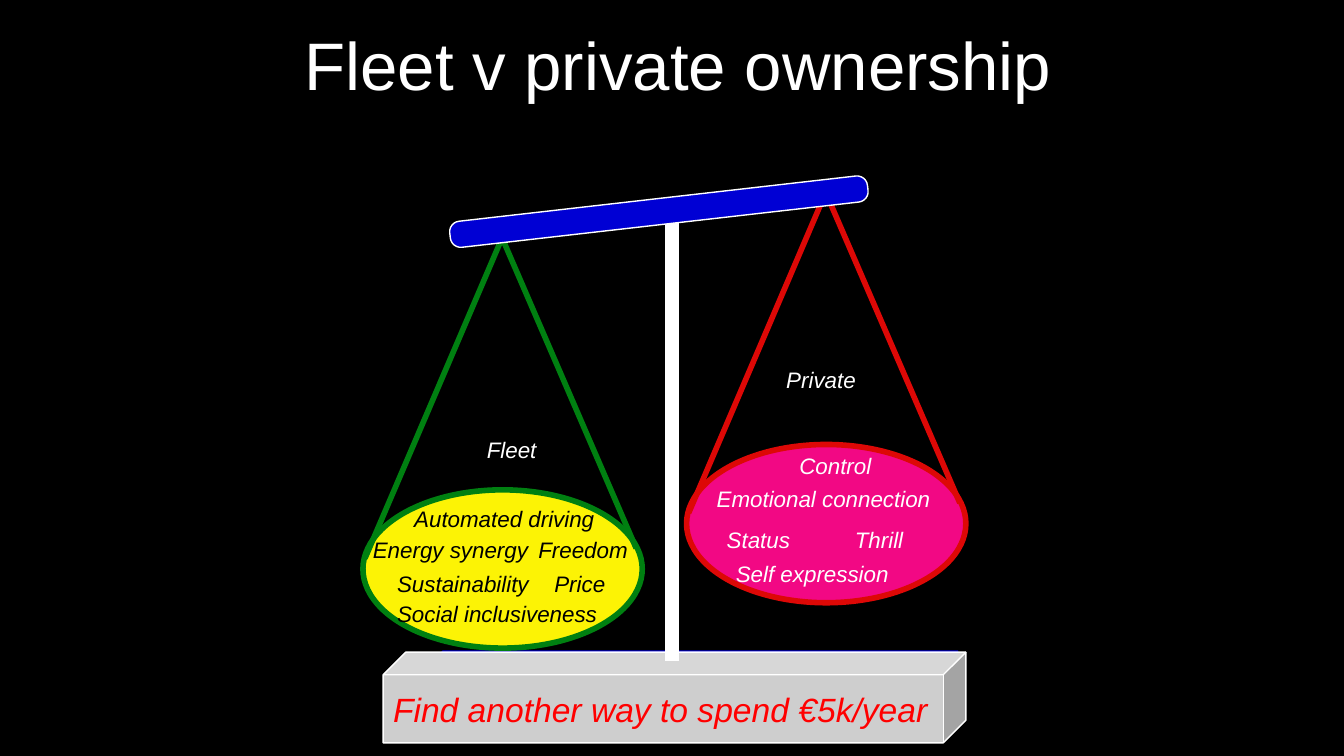
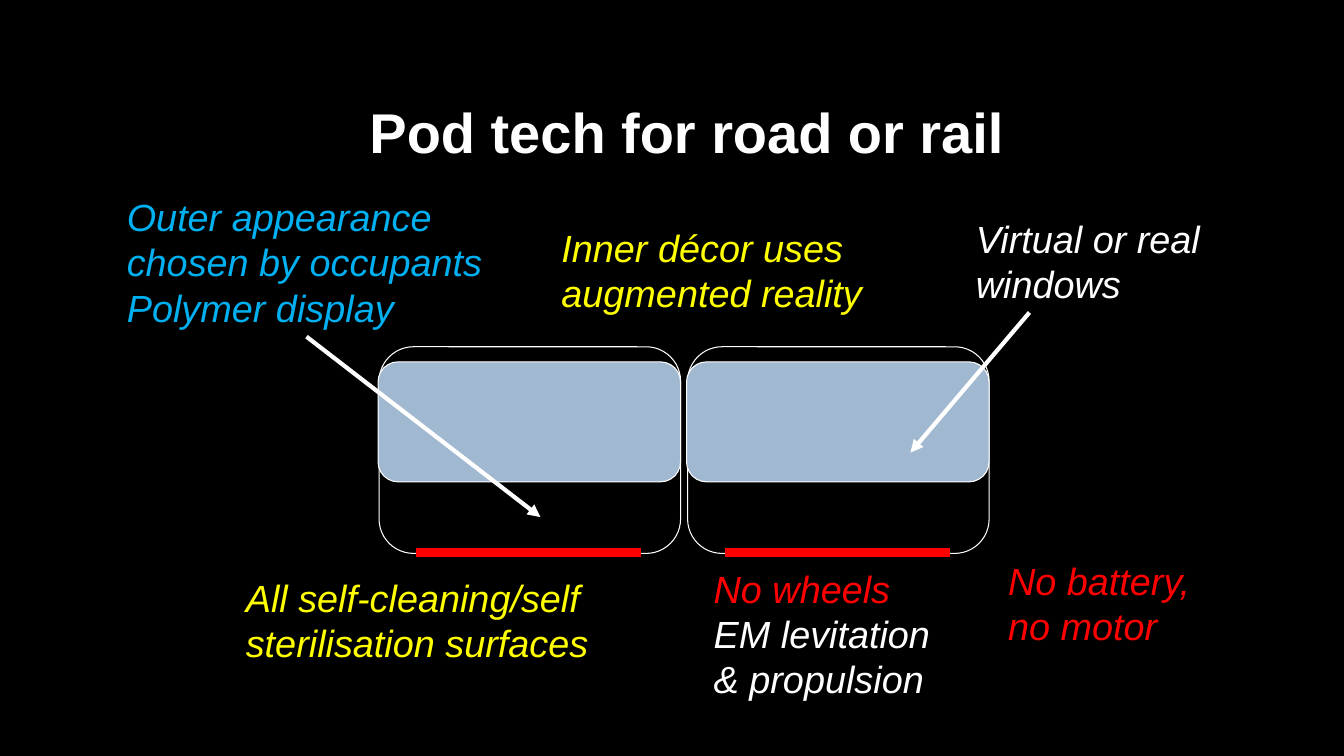
from lxml import etree
from pptx import Presentation
from pptx import util as u
from pptx.dml import color
from pptx.enum import shapes, text
from pptx.oxml import ns

# The slide is a grid of square cells; every length is in columns or rows
COLS, ROWS = 133.3, 75
WIDTH, HEIGHT = u.Inches(13.33), u.Inches(7.5)

BLACK, WHITE, RED, YELLOW = "000000", "FFFFFF", "FF0000", "FFFF00"
GREY, BLUE, SKY, GLASS = "CECECE", "0000D4", "00B0F0", "A1B8D1"
PAN_PINK, PAN_YELLOW = "F20884", "FCF305"
ROPE_RED, ROPE_GREEN = "DD0806", "008011"


def rgb(hex_string):
    return color.RGBColor.from_string(hex_string)


def col(n):
    return round(WIDTH * n / COLS)


def row(n):
    return round(HEIGHT * n / ROWS)


def box(left, top, width, height):
    return col(left), row(top), col(width), row(height)


class Deck:
    """Holds the shared style and the slide being built."""
    font = "Arial"

    def __init__(self):
        self.prs = Presentation()
        self.prs.slide_width, self.prs.slide_height = WIDTH, HEIGHT
        backdrop = self.prs.slide_master.background.fill
        backdrop.solid()
        backdrop.fore_color.rgb = rgb(BLACK)
        self.slide = None

    def add_slide(self, title, place, size, bold=False):
        self.slide = self.prs.slides.add_slide(self.prs.slide_layouts[5])
        heading = self.slide.shapes.title
        heading.left, heading.top, heading.width, heading.height = box(*place)
        frame = heading.text_frame
        frame.auto_size = text.MSO_AUTO_SIZE.NONE
        frame.vertical_anchor = text.MSO_ANCHOR.MIDDLE
        self.set_text(frame, [(title, WHITE)], size, bold=bold,
                      align=text.PP_ALIGN.CENTER)

    def set_text(self, frame, lines, size, bold=False, italic=False,
                 align=text.PP_ALIGN.LEFT):
        """Fill a frame with one paragraph for each (wording, colour)."""
        for i, (wording, ink) in enumerate(lines):
            para = frame.add_paragraph() if i else frame.paragraphs[0]
            para.text, para.alignment = wording, align
            font = para.font
            font.name, font.size = self.font, u.Pt(size)
            font.bold, font.italic = bold, italic
            font.color.rgb = rgb(ink)

    def label(self, place, lines, size, wrap=True):
        frame = self.slide.shapes.add_textbox(*box(*place)).text_frame
        frame.word_wrap = wrap
        frame.auto_size = text.MSO_AUTO_SIZE.SHAPE_TO_FIT_TEXT
        self.set_text(frame, lines, size, italic=True)

    def paint(self, shape, fill, outline, weight):
        shape.shadow.inherit = False
        if fill:
            shape.fill.solid()
            shape.fill.fore_color.rgb = rgb(fill)
        else:
            shape.fill.background()
        shape.line.color.rgb = rgb(outline)
        shape.line.width = u.Pt(weight)
        return shape

    def shape(self, kind, place, fill, outline, weight):
        new = self.slide.shapes.add_shape(kind, *box(*place))
        return self.paint(new, fill, outline, weight)

    def outline(self, points, fill, outline, weight):
        start, *rest = [(col(x), row(y)) for x, y in points]
        builder = self.slide.shapes.build_freeform(*start)
        builder.add_line_segments(rest, close=True)
        return self.paint(builder.convert_to_shape(), fill, outline, weight)

    def line(self, start, end, ink, weight, arrow=False):
        new = self.slide.shapes.add_connector(
            shapes.MSO_CONNECTOR.STRAIGHT,
            col(start[0]), row(start[1]), col(end[0]), row(end[1]))
        new.line.color.rgb = rgb(ink)
        new.line.width = u.Pt(weight)
        props = new._element.spPr
        if arrow:
            etree.SubElement(props.find(ns.qn("a:ln")), ns.qn("a:tailEnd"),
                             type="triangle")
        etree.SubElement(props, ns.qn("a:effectLst"))


def hang_pan(deck, left, top, fill, rope, ink, name, benefits):
    """A pan on two ropes, its name above and its benefits inside."""
    deck.shape(shapes.MSO_SHAPE.OVAL, (left, top, 27.7, 15.7), fill, rope, 4)
    apex = (left + 13.8, top - 25)
    for dx, dy in ((0.2, 6.8), (27.1, 5.8)):
        deck.line(apex, (left + dx, top + dy), rope, 4)
    for (wording, x, y, width), tint in [
            (name, WHITE), *((benefit, ink) for benefit in benefits)]:
        deck.label((x, y, width, 3.7), [(wording, tint)], 16, wrap=False)


def ownership_slide(deck):
    deck.add_slide("Fleet v private ownership", (28.8, 1.8, 76.9, 9.1), 48)

    # Base and post
    deck.outline([(43.9, 64.6), (38.9, 73.4), (91.3, 73.4), (95, 64.6)],
                 GREY, BLUE, 1)
    base = deck.shape(shapes.MSO_SHAPE.CUBE, (38, 64.7, 57.8, 9),
                      GREY, WHITE, 1)
    base.text_frame.word_wrap = False
    base.text_frame.vertical_anchor = text.MSO_ANCHOR.MIDDLE
    deck.set_text(base.text_frame,
                  [("Find another way to spend €5k/year", RED)],
                  24, italic=True)
    deck.line((66.7, 22), (66.7, 65.6), WHITE, 10)

    # Pans: wording, left, top, width
    hang_pan(deck, 68.1, 44.1, PAN_PINK, ROPE_RED, WHITE,
             ("Private", 77, 35.8, 9.4), [
                 ("Control", 78.3, 44.4, 9.6),
                 ("Emotional connection", 70.1, 47.6, 24.4),
                 ("Status", 71.1, 51.7, 8.7),
                 ("Thrill", 83.8, 51.7, 7.1),
                 ("Self expression", 72, 55.1, 18.1)])
    hang_pan(deck, 36, 48.6, PAN_YELLOW, ROPE_GREEN, BLACK,
             ("Fleet", 47.3, 42.8, 7.3), [
                 ("Automated driving", 40.1, 49.6, 20.9),
                 ("Energy synergy", 36, 52.7, 18.4),
                 ("Freedom", 52.4, 52.7, 11.5),
                 ("Sustainability", 38.4, 56.1, 15.8),
                 ("Price", 54, 56.1, 7.4),
                 ("Social inclusiveness", 38.4, 59, 23)])

    # Tilted beam
    beam = deck.shape(shapes.MSO_SHAPE.ROUNDED_RECTANGLE,
                      (44.5, 19.7, 41.7, 2.6), BLUE, WHITE, 1)
    beam.adjustments[0] = 0.4
    beam.rotation = -6.5


def pod_slide(deck):
    deck.add_slide("Pod tech for road or rail", (34.9, 6, 66.4, 14.1), 40,
                   bold=True)

    # Two equal pods: body, window, levitation strip
    rounded = shapes.MSO_SHAPE.ROUNDED_RECTANGLE
    for pod in range(2):
        left = 37.5 + pod * 30.6
        deck.shape(rounded, (left + 0.1, 34.4, 29.9, 20.5), None, WHITE, 0.75)
        deck.shape(rounded, (left, 35.9, 30, 11.9), GLASS, WHITE, 0.75)
        deck.line((left + 3.8, 54.8), (left + 26.1, 54.8), RED, 6)

    # Captions
    size = 27
    deck.label((11.6, 18.7, 37.6, 14.6),
               [("Outer appearance chosen by occupants", SKY),
                ("Polymer display", SKY)], size)
    deck.label((54.7, 21.8, 37.6, 10.1),
               [("Inner décor uses augmented reality", YELLOW)], size)
    deck.label((95.8, 20.9, 24.5, 10.1),
               [("Virtual or real", WHITE), ("windows", WHITE)], size,
               wrap=False)
    deck.label((23.4, 56.5, 37.6, 10.1),
               [("All self-cleaning/self sterilisation surfaces", YELLOW)],
               size)
    deck.label((69.8, 55.6, 26.8, 14.6),
               [("No wheels", RED), ("EM levitation & propulsion", WHITE)],
               size)
    deck.label((99, 54.8, 20.5, 10.1), [("No battery, no motor", RED)], size)

    # Pointers
    deck.line((30.4, 33.4), (53.6, 51.3), WHITE, 3, arrow=True)
    deck.line((102.1, 31), (90.3, 44.9), WHITE, 3, arrow=True)


def main():
    deck = Deck()
    ownership_slide(deck)
    pod_slide(deck)
    deck.prs.save("out.pptx")


if __name__ == "__main__":
    main()
